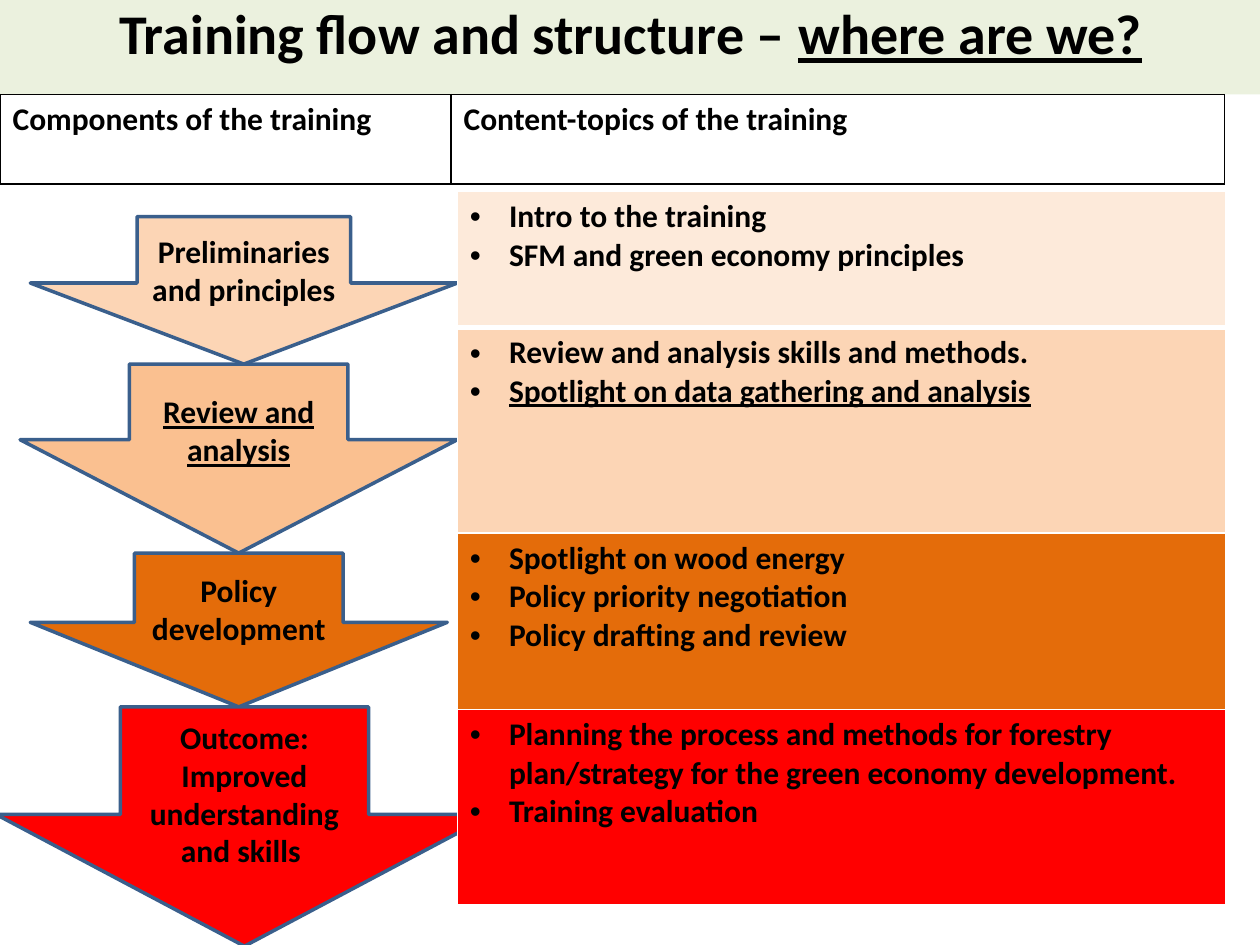
from dataclasses import dataclass

from lxml.etree import SubElement
from pptx import Presentation
from pptx.dml.color import RGBColor
from pptx.enum.shapes import MSO_SHAPE
from pptx.enum.text import MSO_ANCHOR, MSO_AUTO_SIZE, PP_ALIGN
from pptx.oxml.ns import qn
from pptx.util import Inches, Pt

COLUMNS, ROWS = 100, 75  # grid over the slide


@dataclass(frozen=True)
class Theme:
    font: str = "Calibri"
    title_size: int = 32
    body_size: int = 18
    text: str = "000000"
    white: str = "FFFFFF"
    banner: str = "EBF1DE"
    outline: str = "3A5F8C"
    cream: str = "FDEADA"
    peach: str = "FCD5B5"
    apricot: str = "FAC090"
    orange: str = "E46C0A"
    red: str = "FF0000"


class SlideBuilder:
    def __init__(self, presentation, theme):
        self.theme = theme
        self.column = presentation.slide_width / COLUMNS
        self.row = presentation.slide_height / ROWS
        self.slide = presentation.slides.add_slide(presentation.slide_layouts[5])

    def box(self, left, top, width, height):
        return (int(left * self.column), int(top * self.row),
                int(width * self.column), int(height * self.row))

    def paint(self, item, color):
        item.fill.solid()
        item.fill.fore_color.rgb = RGBColor.from_string(color)

    def format_run(self, run, size, underline=False):
        run.font.name = self.theme.font
        run.font.size = Pt(size)
        run.font.bold = True
        run.font.underline = underline
        run.font.color.rgb = RGBColor.from_string(self.theme.text)

    def title(self, area, plain, underlined):
        shape = self.slide.shapes.title
        shape.left, shape.top, shape.width, shape.height = self.box(*area)
        self.paint(shape, self.theme.banner)
        frame = shape.text_frame
        frame.auto_size = MSO_AUTO_SIZE.NONE
        frame.vertical_anchor = MSO_ANCHOR.TOP
        frame.text = plain
        paragraph = frame.paragraphs[0]
        paragraph.alignment = PP_ALIGN.CENTER
        paragraph.add_run().text = underlined
        for run in paragraph.runs:
            self.format_run(run, self.theme.title_size, run.text == underlined)

    def arrow(self, area, text, color, head, underline=False):
        shape = self.slide.shapes.add_shape(MSO_SHAPE.DOWN_ARROW, *self.box(*area))
        shape.shadow.inherit = False
        shape.adjustments[0], shape.adjustments[1] = 0.5, head
        self.paint(shape, color)
        shape.line.color.rgb = RGBColor.from_string(self.theme.outline)
        shape.line.width = Pt(2)
        frame = shape.text_frame
        frame.word_wrap = True
        frame.vertical_anchor = MSO_ANCHOR.MIDDLE
        frame.text = text
        paragraph = frame.paragraphs[0]
        paragraph.alignment = PP_ALIGN.CENTER
        self.format_run(paragraph.runs[0], self.theme.body_size, underline)

    def table(self, left, top, widths, heights):
        area = self.box(left, top, sum(widths), sum(heights))
        table = self.slide.shapes.add_table(len(heights), len(widths), *area).table
        table.first_row = table.horz_banding = False
        for column, width in zip(table.columns, widths):
            column.width = int(width * self.column)
        for row, height in zip(table.rows, heights):
            row.height = int(height * self.row)
        return table

    def cell(self, cell, lines, color, borders, bulleted=False, underlined=()):
        """Borders map each side (L, R, T, B) to a colour and a width."""
        properties = cell._tc.get_or_add_tcPr()
        for side, (border_color, width) in borders.items():
            line = SubElement(properties, qn(f"a:ln{side}"), w=str(Pt(width)))
            SubElement(SubElement(line, qn("a:solidFill")), qn("a:srgbClr"),
                       val=border_color)
        self.paint(cell, color)
        cell.text_frame.text = "\n".join(lines)
        for paragraph in cell.text_frame.paragraphs:
            if bulleted:
                self.bullet(paragraph)
            for run in paragraph.runs:
                self.format_run(run, self.theme.body_size, run.text in underlined)

    def bullet(self, paragraph):
        indent = Inches(0.31)
        properties = paragraph._p.get_or_add_pPr()
        properties.set("marL", str(indent))
        properties.set("indent", str(-indent))
        SubElement(properties, qn("a:buFont"), typeface="Arial")
        SubElement(properties, qn("a:buChar"), char="•")


def main():
    presentation = Presentation()
    presentation.slide_width, presentation.slide_height = Inches(10), Inches(7.5)
    theme = Theme()
    builder = SlideBuilder(presentation, theme)

    # Title banner
    builder.title((0, -0.6, 100.1, 8.1),
                  "Training flow and structure – ", "where are we?")

    # Chain of arrows: each starts where the one above ends
    arrows = [
        (2.4, 33.9, 11.7, "Preliminaries and principles", theme.peach, 0.55, False),
        (1.6, 34.7, 15, "Review and analysis", theme.apricot, 0.6, True),
        (2.4, 33.1, 12.2, "Policy development", theme.orange, 0.55, False),
        (-0.3, 39.4, 19, "Outcome: Improved understanding and skills ",
         theme.red, 0.55, False),
    ]
    top = 17.2
    for left, width, height, text, color, head, underline in arrows:
        builder.arrow((left, top, width, height), text, color, head, underline)
        top += height

    # Topics beside the arrows
    spotlight = "Spotlight on data gathering and analysis"
    topics = [
        (10.8, theme.cream, ["Intro to the training",
                             "SFM and green economy principles"]),
        (16.3, theme.peach, ["Review and analysis skills and methods.", spotlight]),
        (14, theme.orange, ["Spotlight on wood energy", "Policy priority negotiation",
                            "Policy drafting and review"]),
        (15.5, theme.red, ["Planning the process and methods for forestry "
                           "plan/strategy for the green economy development.",
                           "Training evaluation"]),
    ]
    table = builder.table(36.3, 15.2, [61], [height for height, *_ in topics])
    for index, (_, color, lines) in enumerate(topics):
        borders = {side: (theme.white, 1) for side in "LRTB"}
        if index == 0:
            borders["B"] = (theme.white, 3)
        elif index == 1:
            borders["T"] = (theme.white, 3)
        builder.cell(table.cell(index, 0), lines, color, borders,
                     bulleted=True, underlined=(spotlight,))

    # Column headings
    headings = ["Components of the training", "Content-topics of the training"]
    table = builder.table(0, 7.5, [35.8, 61.4], [7.1])
    for index, heading in enumerate(headings):
        borders = {side: (theme.text, 1) for side in "LRTB"}
        builder.cell(table.cell(0, index), [heading], theme.white, borders)

    presentation.save("out.pptx")


if __name__ == "__main__":
    main()
